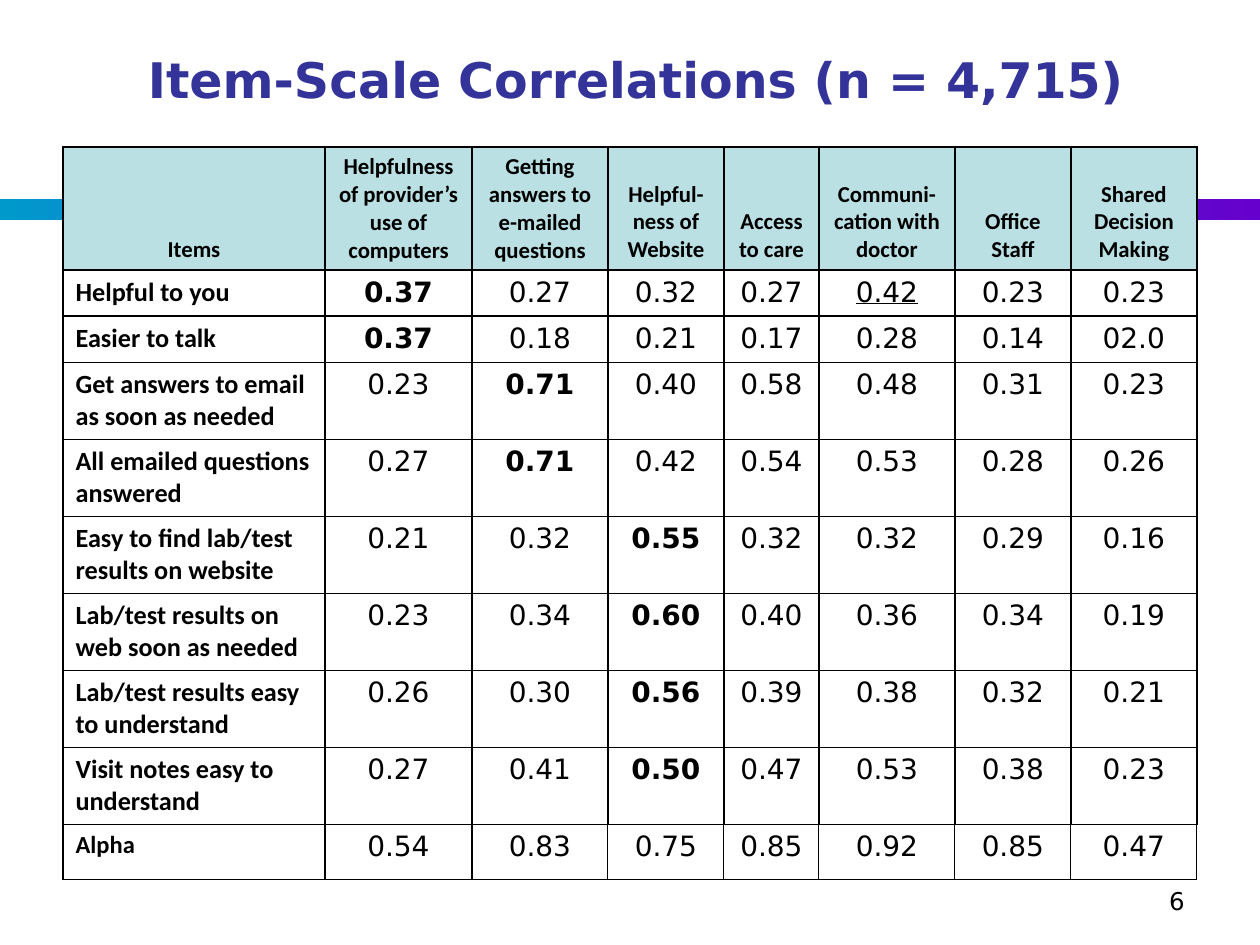
from lxml.etree import SubElement
from pptx import Presentation
from pptx.dml.color import RGBColor
from pptx.enum.shapes import MSO_SHAPE
from pptx.enum.text import MSO_ANCHOR, PP_ALIGN
from pptx.oxml.ns import qn
from pptx.util import Emu, Pt

SCALE = 914400 / 126
THEME = {
    "ink": "000000", "title": "333399", "head": "BBE0E3",
    "left": "0099CC", "right": "6600CC",
    "sans": "DejaVu Sans", "label": "Calibri",
    "title_size": 28, "page_size": 14, "head_size": 13,
    "item_size": 15, "alpha_size": 14, "value_size": 16,
}
HEADS = [
    "Items", "Helpfulness of provider’s use of computers",
    "Getting answers to e-mailed questions", "Helpful-ness of Website",
    "Access to care", "Communi-cation with doctor", "Office Staff",
    "Shared Decision Making",
]
# Item, column of its own scale (bold), correlations
ITEMS = [
    ("Helpful to you", 1, "0.37 0.27 0.32 0.27 0.42 0.23 0.23"),
    ("Easier to talk", 1, "0.37 0.18 0.21 0.17 0.28 0.14 02.0"),
    ("Get answers to email as soon as needed", 2, "0.23 0.71 0.40 0.58 0.48 0.31 0.23"),
    ("All emailed questions answered", 2, "0.27 0.71 0.42 0.54 0.53 0.28 0.26"),
    ("Easy to find lab/test results on website", 3, "0.21 0.32 0.55 0.32 0.32 0.29 0.16"),
    ("Lab/test results on web soon as needed", 3, "0.23 0.34 0.60 0.40 0.36 0.34 0.19"),
    ("Lab/test results easy to understand", 3, "0.26 0.30 0.56 0.39 0.38 0.32 0.21"),
    ("Visit notes easy to understand", 3, "0.27 0.41 0.50 0.47 0.53 0.38 0.23"),
    ("Alpha", None, "0.54 0.83 0.75 0.85 0.92 0.85 0.47"),
]
WIDTHS = [262, 147, 136, 116, 95, 136, 116, 126]
HEIGHTS = [123] + [46] * 2 + [77] * 6 + [55]
UNDERLINED = (1, 5)


def px(*nums):
    return [Emu(round(n * SCALE)) for n in nums]


def write(frame, text, align, size, face, color=THEME["ink"], **more):
    frame.word_wrap = True
    para = frame.paragraphs[0]
    para.alignment = align
    run = para.add_run()
    run.text = text
    run.font.color.rgb = RGBColor.from_string(color)
    for key, val in {"size": Pt(size), "name": face, **more}.items():
        setattr(run.font, key, val)


deck = Presentation()
deck.slide_width, deck.slide_height = px(1260, 945)
slide = deck.slides.add_slide(deck.slide_layouts[6])
shapes = slide.shapes

band = shapes.add_shape(MSO_SHAPE.RECTANGLE, *px(0, 199, 1260, 21))
band.shadow.inherit = False
band.line.fill.background()
band.fill.gradient()
band.fill.gradient_angle = 0
for stop, side in zip(band.fill.gradient_stops, ("left", "right")):
    stop.color.rgb = RGBColor.from_string(THEME[side])

page = shapes.add_textbox(*px(903, 880, 294, 65))
write(page.text_frame, "6", PP_ALIGN.RIGHT, THEME["page_size"], THEME["sans"])

title = shapes.add_textbox(*px(53, 0, 1165, 158))
title.text_frame.vertical_anchor = MSO_ANCHOR.MIDDLE
write(title.text_frame, "Item-Scale Correlations (n = 4,715)", PP_ALIGN.CENTER,
      THEME["title_size"], THEME["sans"], THEME["title"], bold=True)

rows = [HEADS] + [[name, *vals.split()] for name, own, vals in ITEMS]
bolds = [None] + [own for name, own, vals in ITEMS]
last = len(rows) - 1
table = shapes.add_table(len(rows), len(HEADS),
                         *px(63, 147, sum(WIDTHS), sum(HEIGHTS))).table
table.first_row = table.horz_banding = False
for col, width in zip(table.columns, px(*WIDTHS)):
    col.width = width
for row, height in zip(table.rows, px(*HEIGHTS)):
    row.height = height

for r, texts in enumerate(rows):
    for c, text in enumerate(texts):
        cell = table.cell(r, c)
        props = cell._tc.get_or_add_tcPr()
        for side in "LRTB":
            thick = 0.75 if r == last and side != "T" else 1
            line = SubElement(props, qn(f"a:ln{side}"), w=str(Pt(thick)))
            solid = SubElement(line, qn("a:solidFill"))
            SubElement(solid, qn("a:srgbClr"), val=THEME["ink"])
        if r == 0:
            cell.fill.solid()
            cell.fill.fore_color.rgb = RGBColor.from_string(THEME["head"])
            cell.vertical_anchor = MSO_ANCHOR.BOTTOM
            kind = "head"
        else:
            cell.fill.background()
            kind = "value" if c else "alpha" if r == last else "item"
        label = kind != "value"
        align = PP_ALIGN.CENTER if r == 0 or c else PP_ALIGN.LEFT
        write(cell.text_frame, text, align, THEME[f"{kind}_size"],
              THEME["label" if label else "sans"],
              bold=label or c == bolds[r], underline=(r, c) == UNDERLINED)

deck.save("out.pptx")
